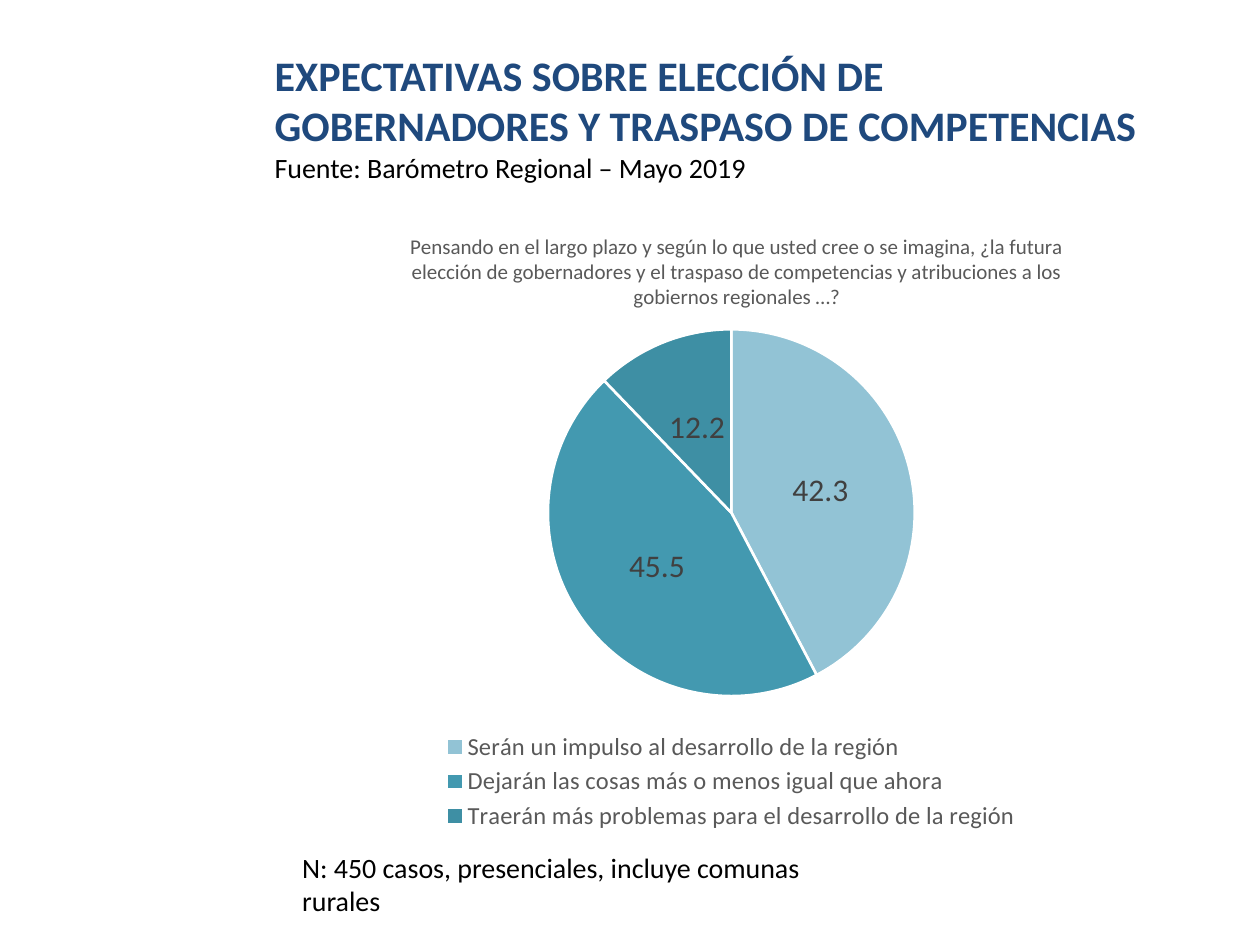
from dataclasses import dataclass

from lxml.etree import SubElement
from pptx import Presentation
from pptx.chart.data import CategoryChartData
from pptx.dml.color import RGBColor
from pptx.enum.chart import XL_CHART_TYPE as ChartType
from pptx.enum.chart import XL_LABEL_POSITION as LabelPos
from pptx.enum.chart import XL_LEGEND_POSITION as LegendPos
from pptx.enum.text import MSO_ANCHOR, MSO_AUTO_SIZE, PP_ALIGN
from pptx.oxml import parse_xml
from pptx.oxml.ns import nsdecls, qn
from pptx.util import Inches, Pt

COLORS = {
    "heading": "1F497D", "text": "000000", "muted": "595959",
    "label": "404040", "edge": "FFFFFF",
}


@dataclass(frozen=True)
class Answer:
    text: str
    percent: float
    color: str


ANSWERS = [
    Answer("Serán un impulso al desarrollo de la región", 42.3, "92C3D5"),
    Answer("Dejarán las cosas más o menos igual que ahora", 45.5, "4399B0"),
    Answer("Traerán más problemas para el desarrollo de la región", 12.2, "3E8FA4"),
]
QUESTION = (
    "Pensando en el largo plazo y según lo que usted cree o se imagina,\u00a0"
    "¿la futura elección de gobernadores y el traspaso de competencias y "
    "atribuciones a los gobiernos regionales …?"
)


def style_font(font, size: int, color: str, bold: bool = False) -> None:
    settings = {"name": "Calibri", "size": Pt(size), "bold": bold}
    for attribute, value in settings.items():
        setattr(font, attribute, value)
    font.color.rgb = RGBColor.from_string(COLORS[color])


def add_run(paragraph, text: str, size: int, color: str, bold: bool = False) -> None:
    run = paragraph.add_run()
    run.text = text
    style_font(run.font, size, color, bold)


def place_part(part, index: int, **fractions: float) -> None:
    """Give a chart part a fixed place, in fractions of the chart area."""
    for old_layout in part.findall(qn("c:layout")):
        part.remove(old_layout)
    layout = parse_xml(f"<c:layout {nsdecls('c')}/>")
    manual = SubElement(layout, qn("c:manualLayout"))
    if part.tag == qn("c:plotArea"):
        SubElement(manual, qn("c:layoutTarget")).set("val", "inner")
    for axis in ("x", "y"):
        SubElement(manual, qn(f"c:{axis}Mode")).set("val", "edge")
    for key, value in fractions.items():
        SubElement(manual, qn(f"c:{key}")).set("val", str(value))
    part.insert(index, layout)


def add_heading(slide) -> None:
    title = slide.shapes.title
    title.left, title.top = Inches(2.08), Inches(0.3)
    title.width, title.height = Inches(7.28), Inches(1.25)
    frame = title.text_frame
    frame.auto_size = MSO_AUTO_SIZE.NONE
    frame.vertical_anchor = MSO_ANCHOR.MIDDLE
    paragraph = frame.paragraphs[0]
    paragraph.alignment = PP_ALIGN.LEFT
    add_run(paragraph, "EXPECTATIVAS SOBRE ELECCIÓN DE GOBERNADORES "
            "Y TRASPASO DE COMPETENCIAS", 24, "heading", True)
    paragraph.add_line_break()
    add_run(paragraph, "Fuente: Barómetro Regional – Mayo 2019", 16, "text")


def add_answer_pie(slide) -> None:
    data = CategoryChartData(number_format="0.0")
    data.categories = [answer.text for answer in ANSWERS]
    data.add_series("Series 1", [answer.percent for answer in ANSWERS])
    chart = slide.shapes.add_chart(
        ChartType.PIE, Inches(2.41), Inches(1.61), Inches(6.79), Inches(5.02), data
    ).chart
    style_font(chart.font, 10, "text")

    # Question above the pie
    chart.has_title = True
    question = chart.chart_title.text_frame.paragraphs[0]
    add_run(question, QUESTION, 12, "muted")
    chart.chart_title.include_in_layout = False

    # Slices
    plot = chart.plots[0]
    plot.vary_by_categories = True
    for index, answer in enumerate(ANSWERS):
        slice_format = plot.series[0].points[index].format
        slice_format.fill.solid()
        slice_format.fill.fore_color.rgb = RGBColor.from_string(answer.color)
        slice_format.line.color.rgb = RGBColor.from_string(COLORS["edge"])
        slice_format.line.width = Pt(1.5)

    # Value labels
    plot.has_data_labels = True
    labels = plot.data_labels
    label_settings = {
        "show_value": True, "show_percentage": False, "number_format": "0.0",
        "number_format_is_linked": False, "position": LabelPos.CENTER,
    }
    for attribute, value in label_settings.items():
        setattr(labels, attribute, value)
    style_font(labels.font, 18, "label")

    # Legend
    chart.has_legend = True
    chart.legend.position = LegendPos.BOTTOM
    chart.legend.include_in_layout = False
    style_font(chart.legend.font, 14, "muted")

    # Places inside the chart area
    chart_root = plot.series[0]._element.getroottree().getroot()
    place_part(chart_root.find(".//" + qn("c:title")), 1, x=0.12, y=0.04)
    place_part(chart_root.find(".//" + qn("c:plotArea")), 0,
               x=0.28, y=0.2, w=0.44, h=0.58)
    place_part(chart_root.find(".//" + qn("c:legend")), 1,
               x=0.15, y=0.83, w=0.7, h=0.17)


def add_sample_note(slide) -> None:
    note = slide.shapes.add_textbox(
        Inches(2.3), Inches(6.7), Inches(4.23), Inches(0.57))
    note.text_frame.word_wrap = True
    add_run(note.text_frame.paragraphs[0],
            "N: 450 casos, presenciales, incluye comunas rurales", 16, "text")


def main() -> None:
    deck = Presentation()
    deck.slide_width, deck.slide_height = Inches(10), Inches(7.5)
    slide = deck.slides.add_slide(deck.slide_layouts[5])
    add_answer_pie(slide)
    add_heading(slide)
    add_sample_note(slide)
    deck.save("out.pptx")


if __name__ == "__main__":
    main()
